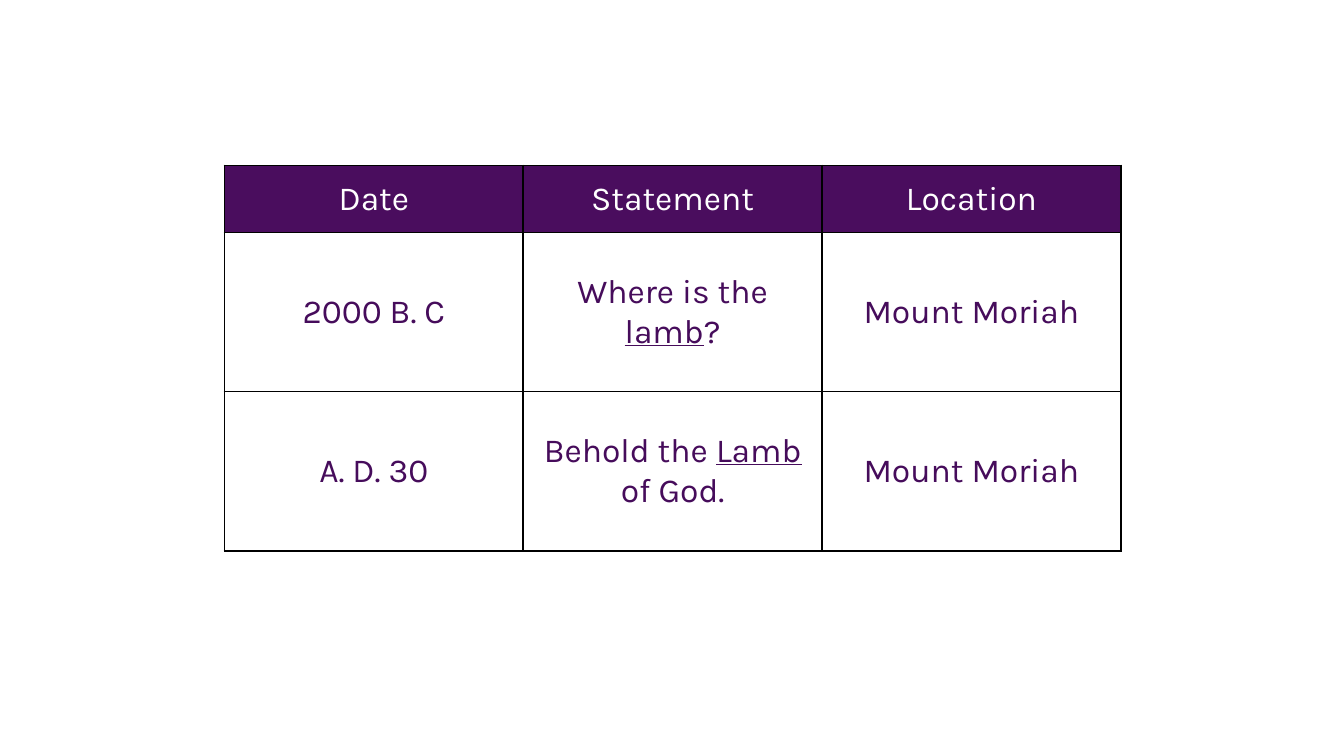
from lxml import etree
from pptx import Presentation
from pptx.dml.color import RGBColor
from pptx.enum import text
from pptx.oxml import ns
from pptx.util import Inches, Pt

HEADER = ["Date", "Statement", "Location"]
ROWS = [
    ["2000 B. C", ("Where is the ", "lamb", "?"), "Mount Moriah"],
    ["A. D. 30", ("Behold the ", "Lamb", " of God."), "Mount Moriah"],
]
LEFT, TOP, WIDTH, HEIGHT = 1.67, 1.23, 6.67, 2.87
HEADER_HEIGHT = 0.5

PURPLE = RGBColor(0x4A, 0x0D, 0x5E)
INK = RGBColor(0x46, 0x0C, 0x5B)
WHITE = RGBColor(0xFF, 0xFF, 0xFF)
BLACK = RGBColor(0, 0, 0)


def write(cell, content, color=INK, size=18, font="Karla"):
    parts = (content,) if isinstance(content, str) else content
    cell.vertical_anchor = text.MSO_ANCHOR.MIDDLE
    p = cell.text_frame.paragraphs[0]
    p.alignment = text.PP_ALIGN.CENTER
    for i, part in enumerate(parts):
        r = p.add_run()
        r.text = part
        r.font.name = font
        r.font.size = Pt(size)
        r.font.color.rgb = color
        if i == 1:
            r.font.underline = True


def add_borders(cell, color=BLACK, width=1):
    props = cell._tc.get_or_add_tcPr()
    for i, side in enumerate(("lnL", "lnR", "lnT", "lnB")):
        line = etree.Element(ns.qn(f"a:{side}"), w=str(Pt(width)))
        fill = etree.SubElement(line, ns.qn("a:solidFill"))
        etree.SubElement(fill, ns.qn("a:srgbClr"), val=str(color))
        props.insert(i, line)


def main():
    prs = Presentation()
    prs.slide_width = Inches(10)
    prs.slide_height = prs.slide_width * 9 // 16
    s = prs.slides.add_slide(prs.slide_layouts[6])
    rows = [HEADER] + ROWS
    table = s.shapes.add_table(
        len(rows), len(HEADER),
        Inches(LEFT), Inches(TOP), Inches(WIDTH), Inches(HEIGHT),
    ).table
    table.horz_banding = False
    table.first_row = False
    body_height = (HEIGHT - HEADER_HEIGHT) / len(ROWS)
    for i, row in enumerate(rows):
        is_header = i == 0
        table.rows[i].height = Inches(HEADER_HEIGHT if is_header else body_height)
        for j, content in enumerate(row):
            cell = table.cell(i, j)
            if is_header:
                cell.fill.solid()
                cell.fill.fore_color.rgb = PURPLE
            else:
                cell.fill.background()
            add_borders(cell)
            write(cell, content, color=WHITE if is_header else INK)
    prs.save("out.pptx")


if __name__ == "__main__":
    main()
